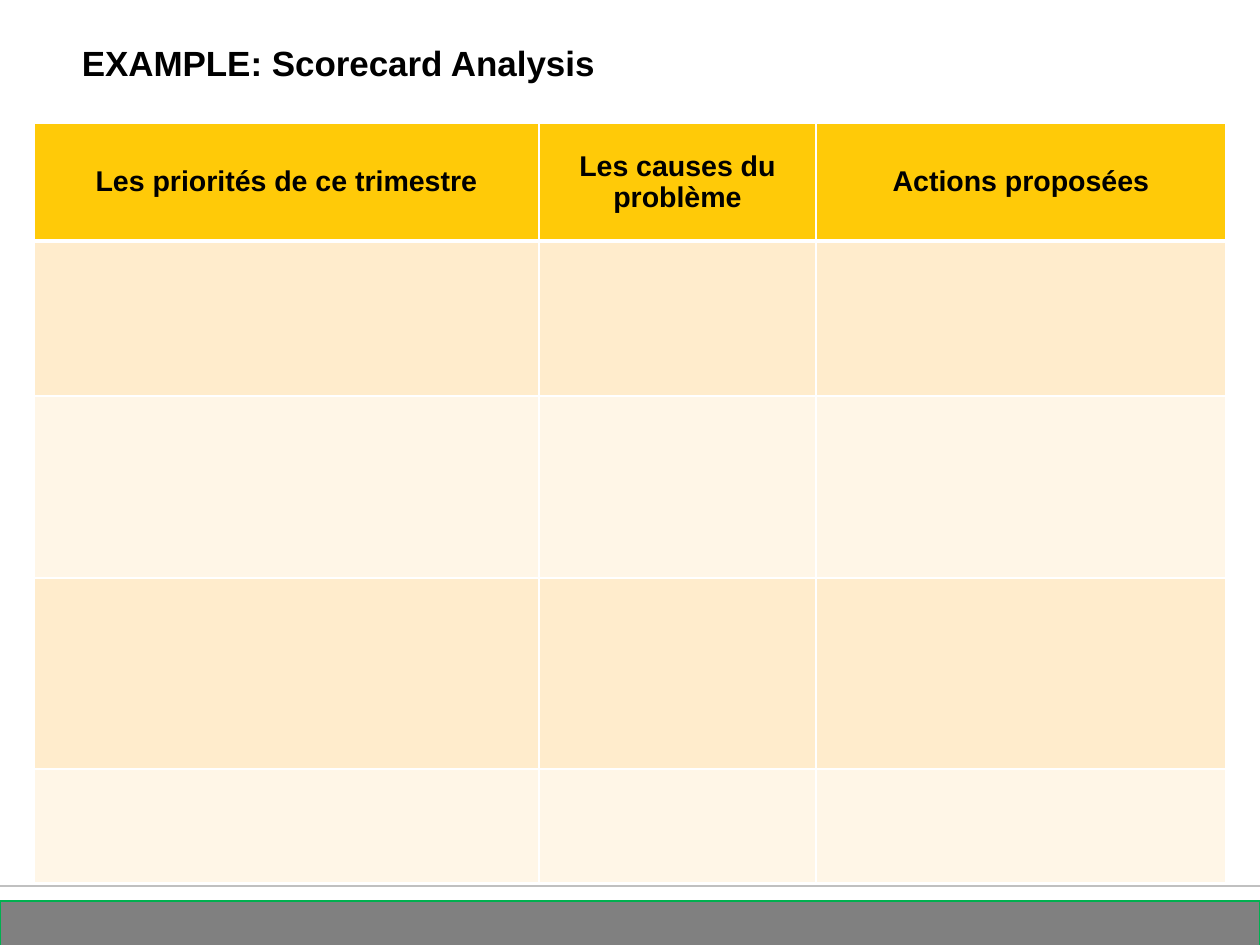
import pptx
import pptx.util
import pptx.dml.color
import pptx.enum.shapes
import pptx.enum.text
import pptx.oxml.ns
import lxml.etree

EMU_PER_PX = 7112
COLORS = {
    "text": "000000",
    "header": "FFCA08",
    "band_dark": "FFECCC",
    "band_light": "FFF6E7",
    "border": "FFFFFF",
    "rule": "C0C0C0",
    "footer": "808080",
    "footer_line": "00B050",
}
HEADINGS = ["Les priorités de ce trimestre", "Les causes du problème", "Actions proposées"]
COLUMN_WIDTHS = [505, 277, 410]
ROW_HEIGHTS = [118, 155, 182, 191, 114]
ALIGN = pptx.enum.text.PP_ALIGN
ANCHOR = pptx.enum.text.MSO_ANCHOR


def px(length):
    return pptx.util.Emu(length * EMU_PER_PX)


def rgb(name):
    return pptx.dml.color.RGBColor.from_string(COLORS[name])


def paint(target, color):
    target.fill.solid()
    target.fill.fore_color.rgb = rgb(color)


def draw_line(line, color, width):
    line.color.rgb = rgb(color)
    line.width = pptx.util.Pt(width)


def write_text(frame, text, size=16, bold=True, color="text", align=ALIGN.LEFT):
    para = frame.paragraphs[0]
    para.alignment = align
    span = para.add_run()
    span.text = text
    span.font.name = "Arial"
    span.font.size = pptx.util.Pt(size)
    span.font.bold = bold
    span.font.color.rgb = rgb(color)


def add_title(page, text):
    title = page.shapes.title
    title.left, title.top, title.width, title.height = map(px, (69, 35, 932, 55))
    frame = title.text_frame
    frame.word_wrap = True
    frame.auto_size = pptx.enum.text.MSO_AUTO_SIZE.NONE
    frame.vertical_anchor = ANCHOR.MIDDLE
    write_text(frame, text, size=19.6)


def add_rule(page, y):
    rule = page.shapes.add_connector(
        pptx.enum.shapes.MSO_CONNECTOR.STRAIGHT, px(0), px(y), px(1260), px(y))
    draw_line(rule.line, "rule", 0.75)
    lxml.etree.SubElement(rule._element.spPr, pptx.oxml.ns.qn("a:effectLst"))


def add_footer(page):
    footer = page.shapes.add_shape(
        pptx.enum.shapes.MSO_SHAPE.RECTANGLE, px(0), px(901), px(1260), px(47))
    footer.shadow.inherit = False
    paint(footer, "footer")
    draw_line(footer.line, "footer_line", 0.75)


def add_borders(cell, **widths):
    properties = cell._tc.get_or_add_tcPr()
    for side in ("L", "R", "T", "B"):
        border = lxml.etree.SubElement(
            properties, pptx.oxml.ns.qn("a:ln" + side),
            w=str(pptx.util.Pt(widths.get(side, 1))))
        fill = lxml.etree.SubElement(border, pptx.oxml.ns.qn("a:solidFill"))
        lxml.etree.SubElement(fill, pptx.oxml.ns.qn("a:srgbClr"), val=COLORS["border"])


def format_cell(cell, row):
    add_borders(cell, T=3 if row == 1 else 1, B=3 if row == 0 else 1)
    if row == 0:
        paint(cell, "header")
    else:
        paint(cell, "band_dark" if row % 2 else "band_light")


def add_scorecard(page):
    table = page.shapes.add_table(
        len(ROW_HEIGHTS), len(COLUMN_WIDTHS), px(34), px(123),
        px(sum(COLUMN_WIDTHS)), px(sum(ROW_HEIGHTS))).table
    table.horz_banding = False
    for column, width in zip(table.columns, COLUMN_WIDTHS):
        column.width = px(width)
    for index, height in enumerate(ROW_HEIGHTS):
        table.rows[index].height = px(height)
        for cell in table.rows[index].cells:
            format_cell(cell, index)
    for cell, heading in zip(table.rows[0].cells, HEADINGS):
        cell.vertical_anchor = ANCHOR.MIDDLE
        write_text(cell.text_frame, heading, align=ALIGN.CENTER)


def main():
    deck = pptx.Presentation()
    deck.slide_width, deck.slide_height = px(1260), px(945)
    page = deck.slides.add_slide(deck.slide_layouts.get_by_name("Title Only"))
    add_rule(page, 886)
    add_footer(page)
    add_title(page, "EXAMPLE: Scorecard Analysis")
    add_scorecard(page)
    deck.save("out.pptx")


if __name__ == "__main__":
    main()
